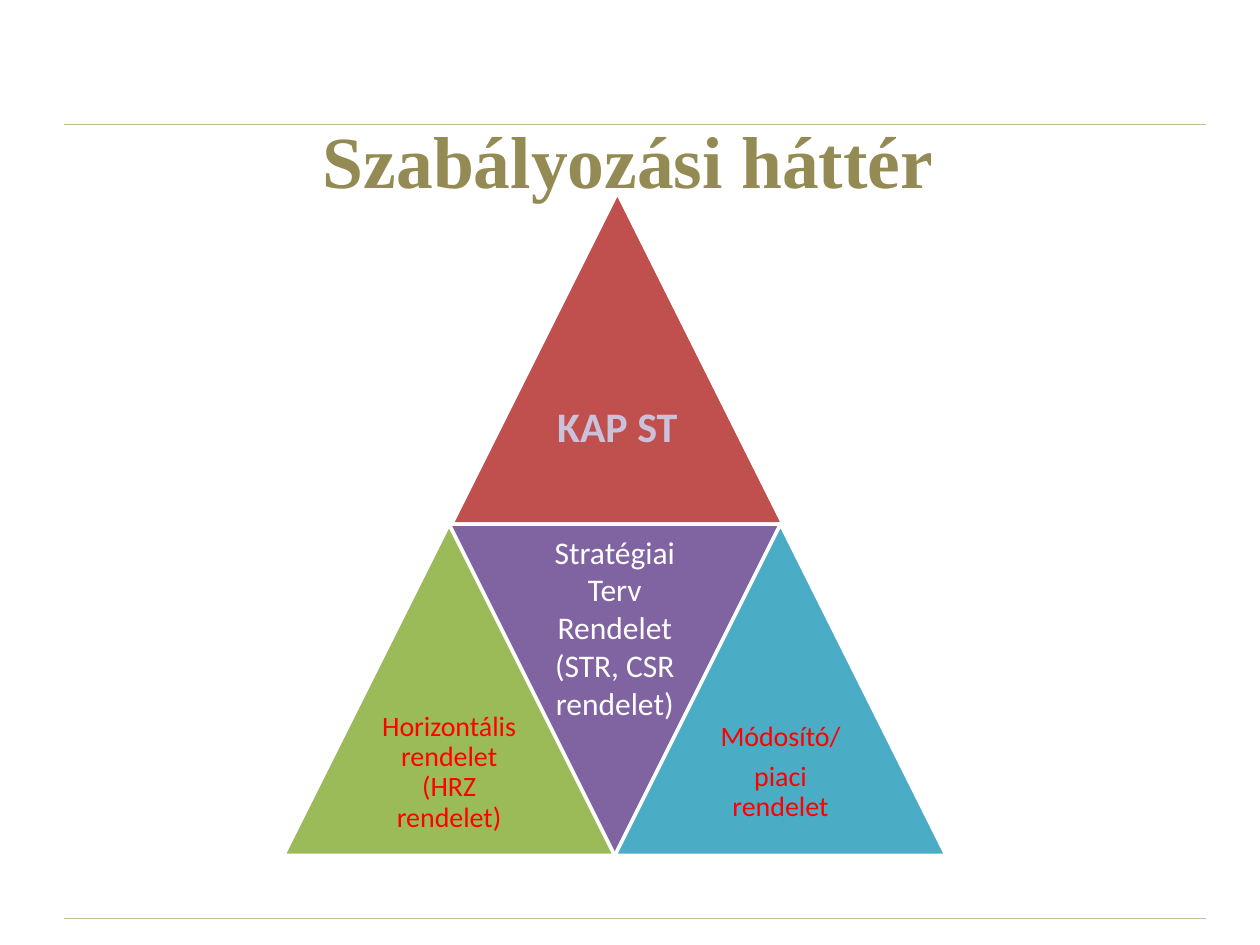
import pptx
import pptx.util
import pptx.dml.color
import pptx.enum.shapes
import pptx.enum.text
import pptx.oxml.ns
import lxml.etree

RGBColor = pptx.dml.color.RGBColor
WHITE = RGBColor(0xFF, 0xFF, 0xFF)
RED = RGBColor(0xFF, 0x00, 0x00)
SAND = RGBColor(0xC4, 0xBD, 0x97)
OLIVE = RGBColor(0x94, 0x8A, 0x54)
BRICK = RGBColor(0xC0, 0x50, 0x4D)
GREEN = RGBColor(0x9B, 0xBB, 0x59)
PURPLE = RGBColor(0x80, 0x64, 0xA2)
TEAL = RGBColor(0x4B, 0xAC, 0xC6)
LILAC = RGBColor(0xCC, 0xC1, 0xDA)

# Pyramid grid: a column is half a triangle wide, a row is one triangle high
SIDE = 2.63
COLUMN = SIDE / 2
PYRAMID_LEFT, PYRAMID_TOP = 2.25, 1.53


def write_text(frame, lines, *, size, color, font="Calibri", bold=False,
               line_spacing=None, space_after=0):
    """Write one centred paragraph per line of text."""
    for index, line in enumerate(lines):
        paragraph = frame.paragraphs[0] if index == 0 else frame.add_paragraph()
        paragraph.alignment = pptx.enum.text.PP_ALIGN.CENTER
        paragraph.line_spacing = line_spacing
        paragraph.space_after = pptx.util.Pt(space_after)
        run = paragraph.add_run()
        run.text = line
        run.font.name = font
        run.font.size = pptx.util.Pt(size)
        run.font.bold = bold
        run.font.color.rgb = color


class PyramidSlide:
    def __init__(self, presentation):
        self.slide = presentation.slides.add_slide(presentation.slide_layouts[6])

    def rule(self, top):
        left, right, height = (pptx.util.Inches(n) for n in (0.51, 9.57, top))
        connector = self.slide.shapes.add_connector(
            pptx.enum.shapes.MSO_CONNECTOR.STRAIGHT, left, height, right, height)
        connector.line.color.rgb = SAND
        connector.line.width = pptx.util.Pt(0.75)
        lxml.etree.SubElement(connector._element.spPr,
                              pptx.oxml.ns.qn("a:effectLst"))

    def text(self, left, top, width, height, lines, inset=0.07, **style):
        box = self.slide.shapes.add_textbox(
            *(pptx.util.Inches(n) for n in (left, top, width, height)))
        frame = box.text_frame
        frame.word_wrap = True
        frame.vertical_anchor = pptx.enum.text.MSO_ANCHOR.MIDDLE
        frame.margin_left = frame.margin_right = pptx.util.Inches(inset)
        frame.margin_top = frame.margin_bottom = pptx.util.Inches(inset)
        write_text(frame, lines, **style)

    def triangle(self, column, row, fill, lines, inverted=False,
                 shift=0, text_shift=0, **style):
        left = PYRAMID_LEFT + column * COLUMN + shift
        top = PYRAMID_TOP + row * SIDE
        shape = self.slide.shapes.add_shape(
            pptx.enum.shapes.MSO_SHAPE.ISOSCELES_TRIANGLE,
            *(pptx.util.Inches(n) for n in (left, top, SIDE, SIDE)))
        shape.shadow.inherit = False
        shape.rotation = 180 if inverted else 0
        shape.fill.solid()
        shape.fill.fore_color.rgb = fill
        shape.line.color.rgb = WHITE
        shape.line.width = pptx.util.Pt(2)
        # The label fills the middle half of the triangle's wide end
        label_top = top + (0 if inverted else SIDE / 2) + text_shift
        self.text(left + SIDE / 4, label_top, SIDE / 2, SIDE / 2, lines, **style)


def main():
    presentation = pptx.Presentation()
    presentation.slide_width = pptx.util.Inches(10)
    presentation.slide_height = pptx.util.Inches(7.5)
    page = PyramidSlide(presentation)

    # Rules and title
    for top in (7.29, 0.99):
        page.rule(top)
    page.text(0, 0.91, 9.97, 0.71, ["Szabályozási háttér"], size=42,
              color=OLIVE, font="Times New Roman", bold=True)

    # Pyramid
    base_style = dict(size=16, color=RED, line_spacing=0.9, space_after=5.6)
    page.triangle(1, 0, BRICK, ["KAP ST"], shift=0.02, text_shift=-0.12,
                  inset=0.1, size=24, color=LILAC, bold=True)
    page.triangle(0, 1, GREEN, ["Horizontális rendelet (HRZ rendelet)"],
                  **base_style)
    page.triangle(1, 1, PURPLE, ["Stratégiai Terv Rendelet (STR, CSR rendelet)"],
                  inverted=True, text_shift=0.16, size=18, color=WHITE)
    page.triangle(2, 1, TEAL, ["Módosító/", "piaci rendelet"], **base_style)

    presentation.save("out.pptx")


if __name__ == "__main__":
    main()
